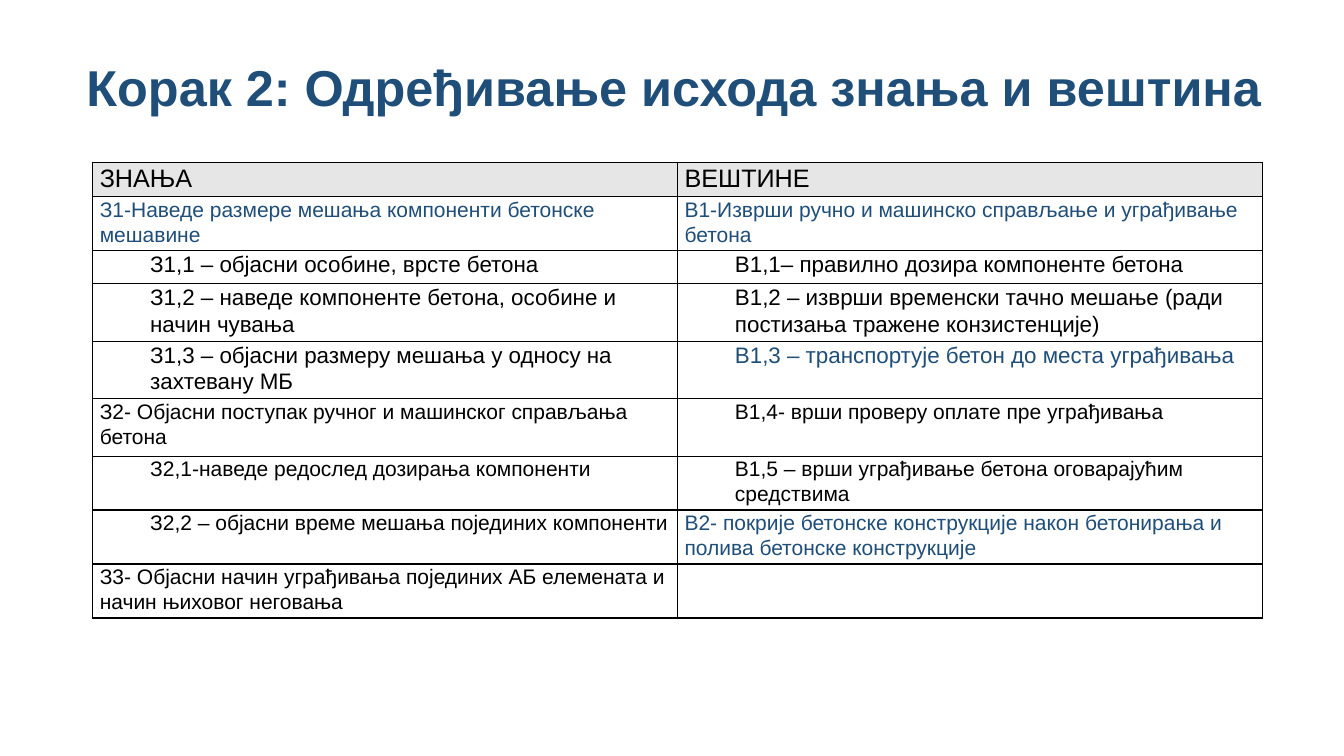
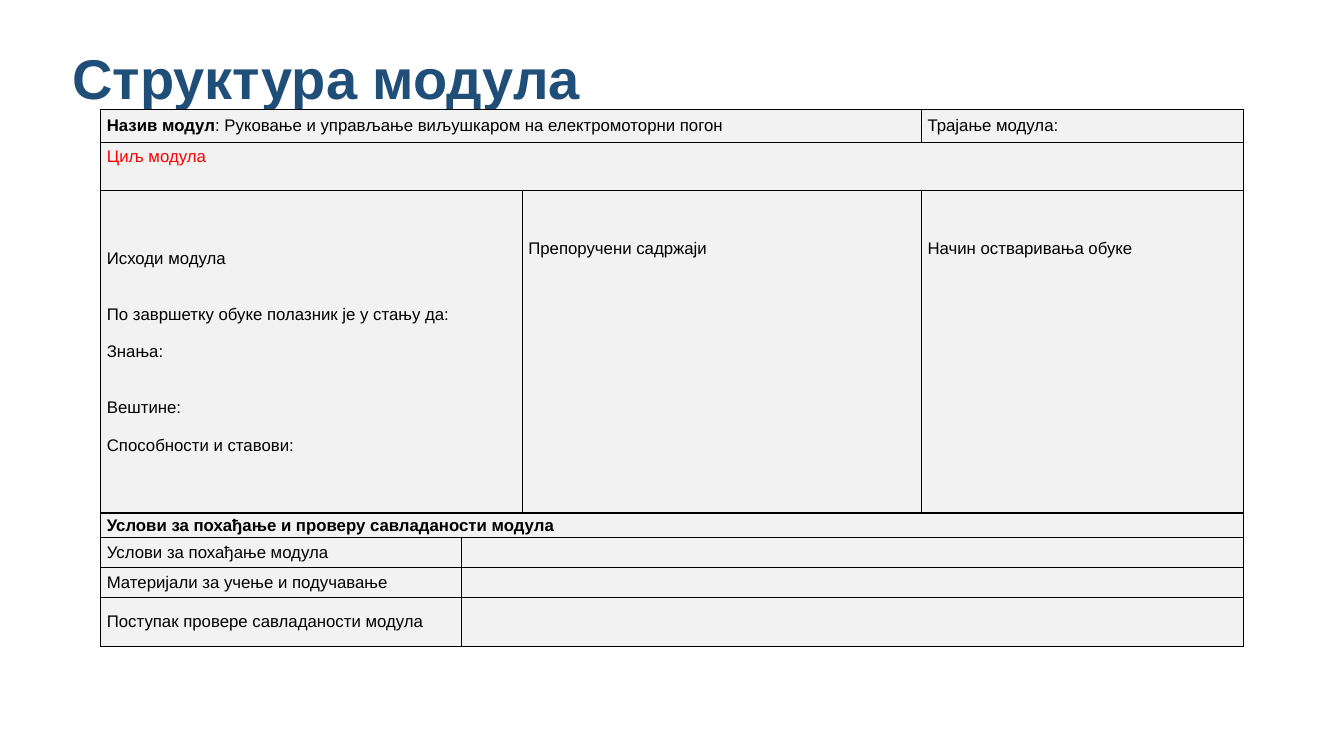
from dataclasses import dataclass
from itertools import product

from lxml import etree
from pptx import Presentation
from pptx.dml.color import RGBColor
from pptx.enum import text as t
from pptx.oxml import ns
from pptx.util import Inches, Pt


@dataclass(frozen=True)
class Theme:
    """Colours, type sizes and font shared by the slides."""

    font: str = "Arial"
    navy: str = "1F4E79"
    black: str = "000000"
    red: str = "FF0000"
    white: str = "FFFFFF"
    header_fill: str = "E7E6E6"
    module_fill: str = "F2F2F2"
    long_title: int = 36
    short_title: int = 40
    header: int = 18
    step: int = 16
    outcome: int = 15
    module: int = 12
    border: int = 1


THEME = Theme()

OUTCOMES = [
    (0.53, THEME.outcome,
     ("З1-Наведе размере мешања компоненти бетонске мешавине", 0, THEME.navy),
     ("В1-Изврши ручно и машинско справљање и уграђивање бетона", 0, THEME.navy)),
    (0.33, THEME.step,
     ("З1,1 – објасни особине, врсте бетона", 1, THEME.black),
     ("В1,1– правилно дозира компоненте бетона", 1, THEME.black)),
    (0.56, THEME.step,
     ("З1,2 – наведе компоненте бетона, особине и начин чувања", 1, THEME.black),
     ("В1,2 – изврши временски тачно мешање (ради постизања тражене конзистенције)",
      1, THEME.black)),
    (0.57, THEME.step,
     ("З1,3 – објасни размеру мешања у односу на захтевану МБ", 1, THEME.black),
     ("В1,3 – транспортује бетон до места уграђивања", 1, THEME.navy)),
    (0.57, THEME.outcome,
     ("З2- Објасни поступак ручног и машинског справљања бетона", 0, THEME.black),
     ("В1,4- врши проверу оплате пре уграђивања", 1, THEME.black)),
    (0.49, THEME.outcome,
     ("З2,1-наведе редослед дозирања компоненти", 1, THEME.black),
     ("В1,5 – врши уграђивање бетона оговарајућим средствима", 1, THEME.black)),
    (0.5, THEME.outcome,
     ("З2,2 – објасни време мешања појединих компоненти", 1, THEME.black),
     ("В2- покрије бетонске конструкције након бетонирања и полива бетонске конструкције",
      0, THEME.navy)),
    (0.52, THEME.outcome,
     ("З3- Објасни начин уграђивања појединих АБ елемената и начин њиховог неговања",
      0, THEME.black),
     None),
]

MODULE_OUTCOMES = [
    ("Исходи модула", 0),
    ("По завршетку обуке полазник је у стању да:", 26.5),
    ("Знања:", 13.5),
    ("Вештине:", 26.5),
    ("Способности и ставови:", 13.5),
]

CONDITIONS = [
    "Услови за похађање модула",
    "Материјали за учење и подучавање",
    "Поступак провере савладаности модула",
]


def write(paragraph, content, size, color=THEME.black, bold=False,
          spacing=None, before=0, indent=0):
    """Add one formatted run to a paragraph."""
    if indent:
        paragraph._p.get_or_add_pPr().set("marL", str(Inches(indent)))
    if spacing:
        paragraph.line_spacing = spacing
    if before:
        paragraph.space_before = Pt(before)
    run = paragraph.add_run()
    run.text = content
    run.font.name = THEME.font
    run.font.size = Pt(size)
    run.font.bold = bold
    run.font.color.rgb = RGBColor.from_string(color)


def add_title(slide, box, content, size):
    """Place a slide title in its box."""
    frame = slide.shapes.add_textbox(*map(Inches, box)).text_frame
    frame.word_wrap = True
    frame.vertical_anchor = t.MSO_ANCHOR.MIDDLE
    write(frame.paragraphs[0], content, size, THEME.navy, bold=True, spacing=0.9)


def add_borders(cell):
    """Draw thin black lines on all four sides of a cell."""
    properties = cell._tc.get_or_add_tcPr()
    for side in ("a:lnL", "a:lnR", "a:lnT", "a:lnB"):
        line = etree.SubElement(properties, ns.qn(side), w=str(Pt(THEME.border)))
        fill = etree.SubElement(line, ns.qn("a:solidFill"))
        etree.SubElement(fill, ns.qn("a:srgbClr"), val=THEME.black)


def add_grid(slide, left, top, widths, heights, fill, inset, anchor):
    """Place an empty ruled table and return it."""
    grid = slide.shapes.add_table(
        len(heights), len(widths), Inches(left), Inches(top),
        Inches(sum(widths)), Inches(sum(heights))).table
    grid.first_row = grid.horz_banding = False
    for column, width in zip(grid.columns, widths):
        column.width = Inches(width)
    for row, height in zip(grid.rows, heights):
        row.height = Inches(height)
    for row, column in product(range(len(heights)), range(len(widths))):
        cell = grid.cell(row, column)
        add_borders(cell)
        cell.fill.solid()
        cell.fill.fore_color.rgb = RGBColor.from_string(fill)
        cell.margin_left = cell.margin_right = Inches(inset)
        cell.margin_top = cell.margin_bottom = 0
        cell.vertical_anchor = anchor
    return grid


def add_outcomes_table(slide, left, top, width):
    """Place the two columns of knowledge and skill outcomes."""
    heights = [0.34] + [outcome[0] for outcome in OUTCOMES]
    grid = add_grid(slide, left, top, [width / 2] * 2, heights,
                    THEME.white, 0.07, t.MSO_ANCHOR.TOP)
    for column, heading in enumerate(("ЗНАЊА", "ВЕШТИНЕ")):
        cell = grid.cell(0, column)
        cell.fill.fore_color.rgb = RGBColor.from_string(THEME.header_fill)
        write(cell.text_frame.paragraphs[0], heading, THEME.header, spacing=1.07)
    for row, (_, size, *pair) in enumerate(OUTCOMES, 1):
        for column, outcome in enumerate(pair):
            if outcome:
                content, level, color = outcome
                write(grid.cell(row, column).text_frame.paragraphs[0], content, size,
                      color, spacing=1.07, indent=level * 0.5)


def add_module_table(slide, left, top):
    """Place the form that describes a training module."""
    grid = add_grid(slide, left, top, [3.58, 0.6, 3.96, 3.19],
                    [0.32, 0.48, 3.2, 0.24, 0.3, 0.3, 0.48],
                    THEME.module_fill, 0.06, t.MSO_ANCHOR.MIDDLE)
    spans = [(0, 0, 2), (1, 0, 3), (2, 0, 1), (3, 0, 3), (4, 1, 3), (5, 1, 3), (6, 1, 3)]
    for row, first, last in spans:
        grid.cell(row, first).merge(grid.cell(row, last))

    def entry(row, column, content, **style):
        write(grid.cell(row, column).text_frame.paragraphs[0], content,
              THEME.module, **style)

    entry(0, 0, "Назив модул", bold=True)
    entry(0, 0, ": Руковање и управљање виљушкаром на електромоторни погон")
    entry(0, 3, "Трајање модула:")
    entry(1, 0, "Циљ модула", color=THEME.red)
    entry(2, 2, "Препоручени садржаји")
    entry(2, 3, "Начин остваривања обуке")
    entry(3, 0, "Услови за похађање и проверу савладаности модула", bold=True)
    for row, condition in enumerate(CONDITIONS, 4):
        entry(row, 0, condition)

    outcomes = grid.cell(2, 0).text_frame
    for number, (content, before) in enumerate(MODULE_OUTCOMES):
        paragraph = outcomes.add_paragraph() if number else outcomes.paragraphs[0]
        write(paragraph, content, THEME.module, before=before)

    for row, column, drop in ((1, 0, 0.05), (2, 0, 0.58), (2, 2, 0.48), (2, 3, 0.48)):
        cell = grid.cell(row, column)
        cell.vertical_anchor = t.MSO_ANCHOR.TOP
        cell.margin_top = Inches(drop)


def main():
    """Build both slides and save the deck."""
    deck = Presentation()
    deck.slide_width, deck.slide_height = Inches(13.33), Inches(7.5)
    blank = deck.slide_layouts[6]

    outcomes = deck.slides.add_slide(blank)
    add_title(outcomes, (0.76, 0.4, 12, 0.99),
              "Корак 2: Одређивање исхода знања и вештина", THEME.long_title)
    add_outcomes_table(outcomes, 0.92, 1.61, 11.6)

    module = deck.slides.add_slide(blank)
    add_title(module, (0.62, 0.35, 11.5, 0.91), "Структура модула", THEME.short_title)
    add_module_table(module, 1, 1.09)

    deck.save("out.pptx")


if __name__ == "__main__":
    main()
